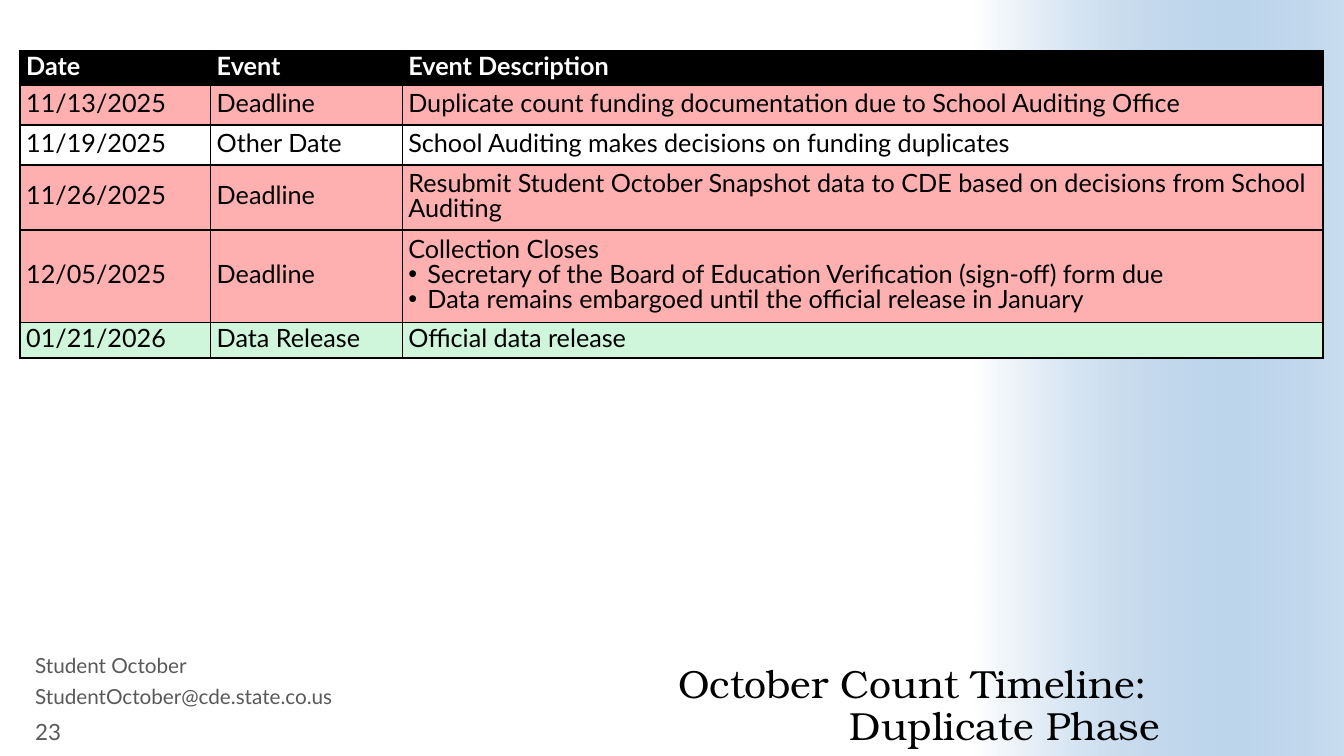
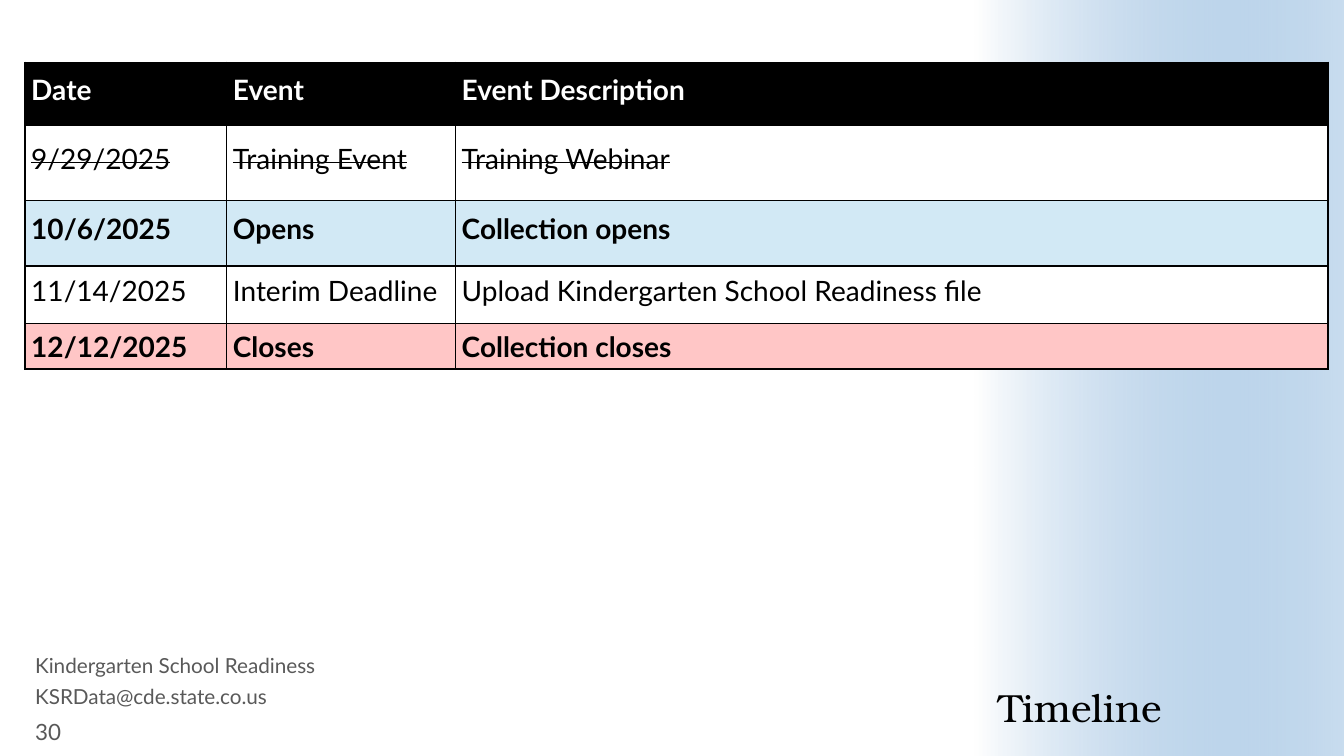
from lxml.etree import SubElement
from pptx import Presentation
from pptx.dml.color import RGBColor
from pptx.enum.shapes import MSO_SHAPE as Shape
from pptx.enum.text import MSO_ANCHOR as Anchor, PP_ALIGN as Align
from pptx.oxml.ns import qn
from pptx.util import Inches, Pt

COLORS = {
    "white": "FFFFFF", "black": "000000", "gray": "595959", "band": "488BC9",
    "red": "FEB0B0", "green": "CFF5DA", "blue": "D2E9F5", "pink": "FFC6C6",
}
BODY_FONT, TITLE_FONT = "Lato", "TeX Gyre Bonum"
HEADINGS = ("Date", "Event", "Event Description")
OUTER_LINE, INNER_LINE = 1.34, 1

# Row looks: fill, text colour, bold, struck through, line spacing in points
LOOKS = {
    "heading": ("black", "white", True, False, 18),
    "deadline": ("red", "black", False, False, 18),
    "plain": ("white", "black", False, False, 18),
    "release": ("green", "black", False, False, 18),
    "past": ("white", "black", False, True, 18),
    "opens": ("blue", "black", True, False, 18),
    "closes": ("pink", "black", True, False, None),
}

# Rows: look, height, date, event, description, then any bullets
SLIDES = [
    {
        "title": ["October Count Timeline: ", "Duplicate Phase"],
        "title_at": (4.26, 6.45),
        "contact": ["Student October", "StudentOctober@cde.state.co.us"],
        "number": "23",
        "table_at": (0.2, 0.5),
        "columns": (1.89, 1.9, 9.13),
        "size": 18,
        "rows": [
            ("heading", 0.35, *HEADINGS),
            ("deadline", 0.39, "11/13/2025", "Deadline",
             "Duplicate count funding documentation due to School Auditing Office"),
            ("plain", 0.4, "11/19/2025", "Other Date",
             "School Auditing makes decisions on funding duplicates"),
            ("deadline", 0.64, "11/26/2025", "Deadline",
             "Resubmit Student October Snapshot data to CDE based on decisions "
             "from School Auditing"),
            ("deadline", 0.92, "12/05/2025", "Deadline", "Collection Closes",
             "Secretary of the Board of Education Verification (sign-off) form due",
             "Data remains embargoed until the official release in January"),
            ("release", 0.35, "01/21/2026", "Data Release", "Official data release"),
        ],
    },
    {
        "title": ["Timeline"],
        "title_at": (4.28, 6.27),
        "contact": ["Kindergarten School Readiness", "KSRData@cde.state.co.us"],
        "number": "30",
        "table_at": (0.25, 0.62),
        "columns": (2, 2.27, 8.65),
        "size": 20,
        "rows": [
            ("heading", 0.62, *HEADINGS),
            ("past", 0.75, "9/29/2025", "Training Event", "Training Webinar"),
            ("opens", 0.65, "10/6/2025", "Opens", "Collection opens"),
            ("plain", 0.57, "11/14/2025", "Interim Deadline",
             "Upload Kindergarten School Readiness file"),
            ("closes", 0.45, "12/12/2025", "Closes", "Collection closes"),
        ],
    },
]


def color(name):
    return RGBColor.from_string(COLORS[name])


def add_span(para, text, size, ink, font=BODY_FONT, bold=False):
    span = para.add_run()
    span.text = text
    span.font.name, span.font.size, span.font.bold = font, Pt(size), bold
    span.font.color.rgb = color(ink)
    return span


def add_box(page, left, top, width, height, anchor):
    box = page.shapes.add_textbox(*map(Inches, (left, top, width, height)))
    frame = box.text_frame
    frame.word_wrap = True
    frame.vertical_anchor = anchor
    return frame


def add_side_band(page):
    """Fade from white to translucent blue along the right edge."""
    band = page.shapes.add_shape(
        Shape.RECTANGLE, Inches(9.67), 0, Inches(3.66), Inches(7.5))
    band.shadow.inherit = False
    band.line.fill.background()
    band.fill.gradient()
    band.fill.gradient_angle = 0
    for stop, position, name in zip(band.fill.gradient_stops, (0, 1), ("white", "band")):
        stop.position = position
        stop.color.rgb = color(name)
    blue = band.fill._fill._gradFill.findall(".//" + qn("a:srgbClr"))[-1]
    SubElement(blue, qn("a:alpha"), val="30000")


def add_title(page, lines, left, top):
    frame = add_box(page, left, top, 7.24, 0.98, Anchor.BOTTOM)
    frame.margin_left = frame.margin_right = frame.margin_top = frame.margin_bottom = 0
    para = frame.paragraphs[0]
    para.alignment, para.line_spacing = Align.RIGHT, 0.9
    for index, line in enumerate(lines):
        if index:
            para.add_line_break()
        add_span(para, line, 28, "black", TITLE_FONT)


def add_footer(page, contact, number):
    for index, line in enumerate(contact):
        frame = add_box(page, 0.25, 6.47 + index * 0.31, 3.89, 0.31, Anchor.TOP)
        frame.paragraphs[0].line_spacing = 0.8
        add_span(frame.paragraphs[0], line, 14.8, "gray")
    frame = add_box(page, 0.25, 7.1, 0.85, 0.31, Anchor.MIDDLE)
    add_span(frame.paragraphs[0], number, 16, "gray")


def set_borders(cell, first, last):
    """Draw all four sides; only lines between columns are thin."""
    widths = {
        "a:lnL": OUTER_LINE if first else INNER_LINE,
        "a:lnR": OUTER_LINE if last else INNER_LINE,
        "a:lnT": OUTER_LINE,
        "a:lnB": OUTER_LINE,
    }
    properties = cell._tc.get_or_add_tcPr()
    for index, (tag, width) in enumerate(widths.items()):
        line = SubElement(properties, qn(tag), w=str(Pt(width)))
        fill = SubElement(line, qn("a:solidFill"))
        SubElement(fill, qn("a:srgbClr"), val=COLORS["black"])
        properties.insert(index, line)


def add_bullet(para):
    properties = para._p.get_or_add_pPr()
    indent = Inches(0.19)
    properties.set("marL", str(indent))
    properties.set("indent", str(-indent))
    SubElement(properties, qn("a:buFont"), typeface="Arial")
    SubElement(properties, qn("a:buChar"), char="•")


def fill_cell(cell, lines, look, size):
    fill, ink, bold, struck, spacing = LOOKS[look]
    cell.fill.solid()
    cell.fill.fore_color.rgb = color(fill)
    cell.vertical_anchor = Anchor.MIDDLE
    cell.margin_left = cell.margin_right = Inches(0.06)
    cell.margin_top = cell.margin_bottom = Inches(0.03)
    frame = cell.text_frame
    for index, line in enumerate(lines):
        para = frame.add_paragraph() if index else frame.paragraphs[0]
        if index:
            add_bullet(para)
        if spacing:
            para.line_spacing = Pt(spacing)
        span = add_span(para, line, size, ink, bold=bold)
        if struck:
            span.font._element.set("strike", "sngStrike")


def add_timeline(page, rows, columns, size, left, top):
    height = sum(row[1] for row in rows)
    table = page.shapes.add_table(
        len(rows), len(columns),
        *map(Inches, (left, top, sum(columns), height))).table
    for column, width in zip(table.columns, columns):
        column.width = Inches(width)
    last = len(columns) - 1
    for r, (look, row_height, date, event, *description) in enumerate(rows):
        table.rows[r].height = Inches(row_height)
        for c, lines in enumerate(([date], [event], description)):
            cell = table.cell(r, c)
            fill_cell(cell, lines, look, size)
            set_borders(cell, c == 0, c == last)


def main():
    deck = Presentation()
    deck.slide_width, deck.slide_height = Inches(13.33), Inches(7.5)
    for content in SLIDES:
        page = deck.slides.add_slide(deck.slide_layouts[6])
        add_side_band(page)
        add_title(page, content["title"], *content["title_at"])
        add_timeline(page, content["rows"], content["columns"],
                     content["size"], *content["table_at"])
        add_footer(page, content["contact"], content["number"])
    deck.save("out.pptx")


if __name__ == "__main__":
    main()
